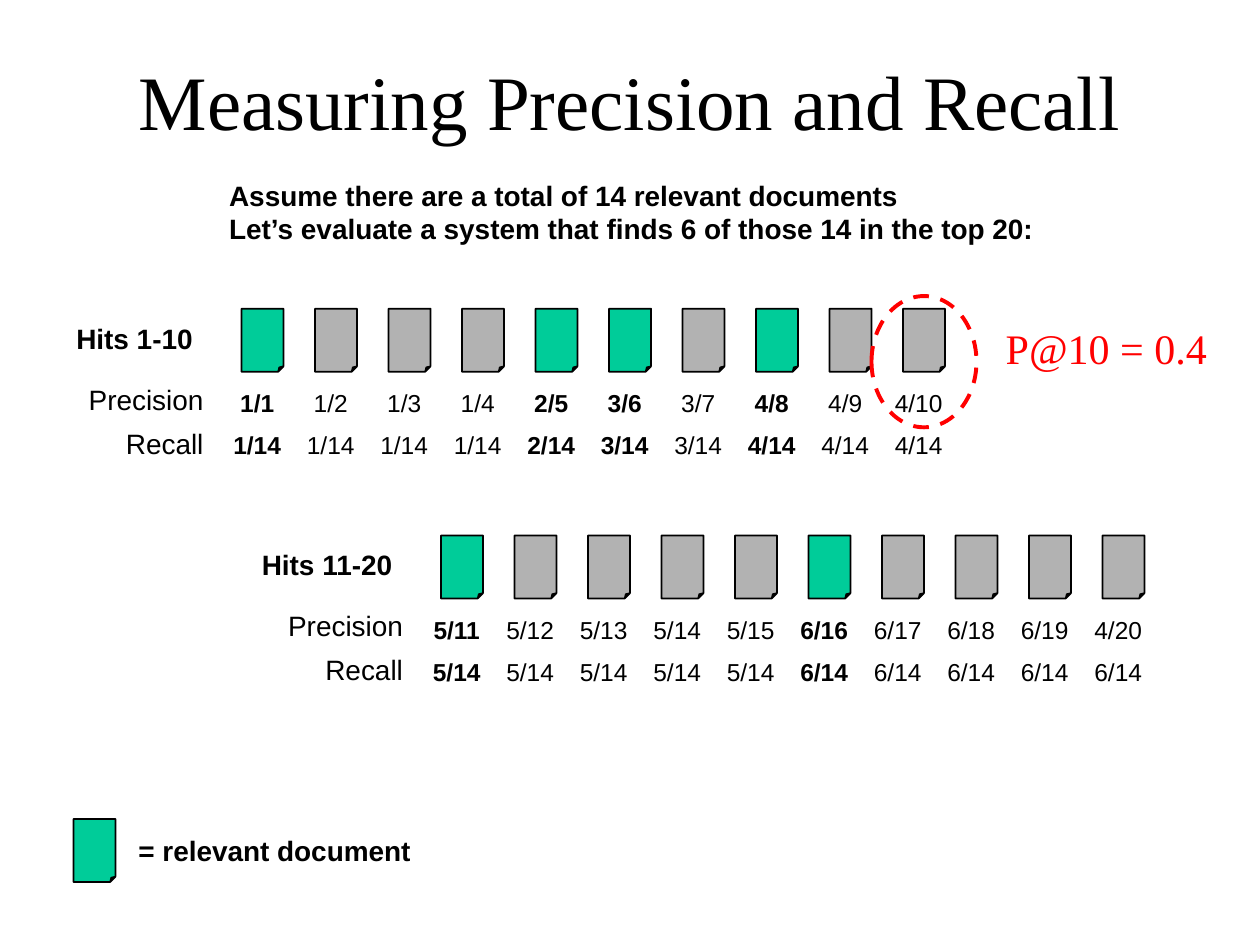
from dataclasses import dataclass

from lxml.etree import SubElement
from pptx import Presentation
from pptx.dml.color import RGBColor
from pptx.enum.dml import MSO_LINE
from pptx.enum.shapes import MSO_SHAPE as Preset
from pptx.enum.text import MSO_ANCHOR as Anchor, MSO_AUTO_SIZE as AutoSize, PP_ALIGN as Align
from pptx.oxml.ns import qn
from pptx.slide import Slide
from pptx.util import Inches, Pt

BLACK = RGBColor(0x00, 0x00, 0x00)
RED = RGBColor(0xFF, 0x00, 0x00)
GREEN = RGBColor(0x00, 0xCC, 0x99)
GRAY = RGBColor(0xB2, 0xB2, 0xB2)

SANS, SERIF = "Arial", "Times New Roman"
UNITS_PER_INCH = 12
HIT_PITCH = 7
TOTAL_RELEVANT = 14
RELEVANT_RANKS = {1, 5, 6, 8, 11, 16}
PRECISION_1_10 = "1/1 1/2 1/3 1/4 2/5 3/6 3/7 4/8 4/9 4/10".split()
PRECISION_11_20 = "5/11 5/12 5/13 5/14 5/15 6/16 6/17 6/18 6/19 4/20".split()


def units(*lengths):
    """Convert grid columns or rows, twelve to the inch, to slide lengths."""
    return [Inches(length / UNITS_PER_INCH) for length in lengths]


def set_fold(shape, share):
    """Set the folded corner's size, which python-pptx does not list as an adjustment."""
    guides = next(shape.element.iter(qn("a:avLst")))
    SubElement(guides, qn("a:gd"), name="adj", fmla=f"val {round(share * 100000)}")


def write(frame, text, size=16, font=SANS, color=BLACK, bold=False, align=Align.LEFT):
    """Write each line of the text as one paragraph in a single format."""
    for index, line in enumerate(text.split("\n")):
        paragraph = frame.add_paragraph() if index else frame.paragraphs[0]
        paragraph.alignment = align
        run = paragraph.add_run()
        run.text = line
        run.font.size = Pt(size)
        run.font.name = font
        run.font.bold = bold
        run.font.color.rgb = color


@dataclass
class RankingSlide:
    """Draws on one slide; every box is column, row, columns wide, rows high."""
    slide: Slide
    document_size: tuple = (4, 6)
    outline: float = 1

    def text(self, box, text, wrap=False, anchor=Anchor.TOP, **style):
        frame = self.slide.shapes.add_textbox(*units(*box)).text_frame
        frame.word_wrap = wrap
        frame.auto_size = AutoSize.NONE if anchor == Anchor.MIDDLE else AutoSize.SHAPE_TO_FIT_TEXT
        frame.vertical_anchor = anchor
        write(frame, text, **style)

    def document(self, column, row, relevant):
        page = self.slide.shapes.add_shape(
            Preset.FOLDED_CORNER, *units(column, row, *self.document_size))
        set_fold(page, 0.125)
        page.shadow.inherit = False
        page.fill.solid()
        page.fill.fore_color.rgb = GREEN if relevant else GRAY
        page.line.color.rgb = BLACK
        page.line.width = Pt(self.outline)

    def highlight(self, box):
        ring = self.slide.shapes.add_shape(Preset.OVAL, *units(*box))
        ring.shadow.inherit = False
        ring.fill.background()
        ring.line.color.rgb = RED
        ring.line.width = Pt(2.25)
        ring.line.dash_style = MSO_LINE.DASH

    def label(self, right, row, width, text, bold=False):
        self.text((right - width, row, width, 4.4), text, bold=bold, align=Align.RIGHT)

    def hits(self, column, row, first_rank, precisions, heading, heading_width):
        """Draw ten ranked documents with their precision and recall below."""
        self.label(column - 3.46, row + 0.6, heading_width, heading, bold=True)
        self.label(column - 2.43, row + 6.4, 13.3, "Precision")
        self.label(column - 2.43, row + 10.6, 9.8, "Recall")
        for index, precision in enumerate(precisions):
            rank = first_rank + index
            relevant = rank in RELEVANT_RANKS
            found = sum(r <= rank for r in RELEVANT_RANKS)
            left = column + index * HIT_PITCH
            self.document(left, row, relevant)
            for offset, value in ((7, precision), (11, f"{found}/{TOTAL_RELEVANT}")):
                self.text((left - 2, row + offset, HIT_PITCH, 4), value, wrap=True,
                          size=14, bold=relevant, align=Align.CENTER)


def main():
    deck = Presentation()
    deck.slide_width, deck.slide_height = Inches(10), Inches(7.5)
    page = RankingSlide(deck.slides.add_slide(deck.slide_layouts[6]))

    page.text((9, 2, 102, 15), "Measuring Precision and Recall", wrap=True,
              anchor=Anchor.MIDDLE, size=44, font=SERIF, align=Align.CENTER)
    page.text((20.64, 16.4, 80, 7.7),
              "Assume there are a total of 14 relevant documents\n"
              "Let’s evaluate a system that finds 6 of those 14 in the top 20:", bold=True)

    page.hits(23, 29.4, 1, PRECISION_1_10, "Hits 1-10", 13.6)
    page.hits(42, 51, 11, PRECISION_11_20, "Hits 11-20", 15)

    page.highlight((83, 28.2, 10, 12.5))
    page.text((94.6, 30.1, 21.7, 6), "P@10 = 0.4", size=24, font=SERIF, color=RED)

    page.document(7, 78, relevant=True)
    page.text((12, 78.8, 28.4, 4.4), "= relevant document", bold=True)

    deck.save("out.pptx")


if __name__ == "__main__":
    main()
